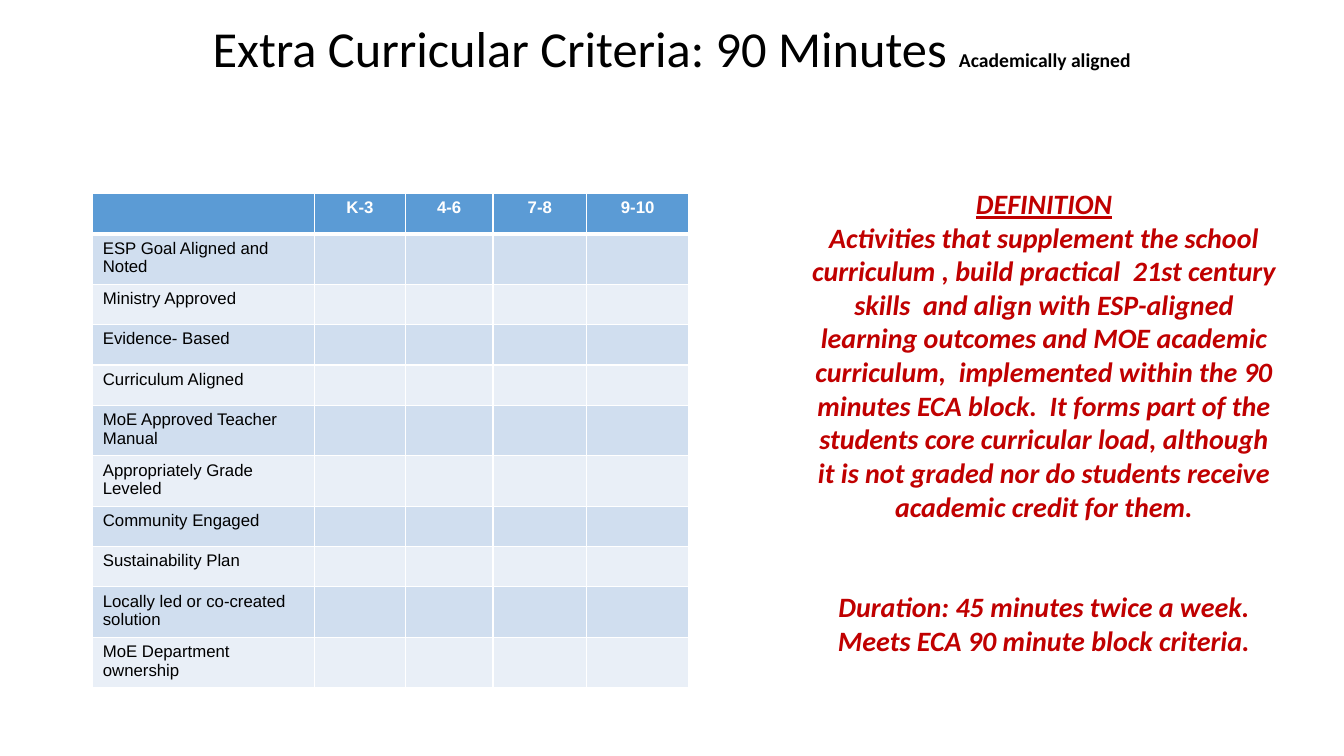
import lxml.etree
import pptx
import pptx.dml.color
import pptx.enum.text
import pptx.oxml.ns
import pptx.util

Inches = pptx.util.Inches
Pt = pptx.util.Pt
RGBColor = pptx.dml.color.RGBColor
CENTER = pptx.enum.text.PP_ALIGN.CENTER

BLACK = RGBColor(0x00, 0x00, 0x00)
WHITE = RGBColor(0xFF, 0xFF, 0xFF)
RED = RGBColor(0xC0, 0x00, 0x00)
HEADER_BLUE = RGBColor(0x5B, 0x9B, 0xD5)
BAND_DARK = RGBColor(0xD0, 0xDE, 0xEF)
BAND_LIGHT = RGBColor(0xE9, 0xEF, 0xF7)

GRADES = ["K-3", "4-6", "7-8", "9-10"]
CRITERIA = [
    "ESP Goal Aligned and Noted",
    "Ministry Approved",
    "Evidence- Based",
    "Curriculum Aligned",
    "MoE Approved Teacher Manual",
    "Appropriately Grade Leveled",
    "Community Engaged",
    "Sustainability Plan",
    "Locally led or co-created solution",
    "MoE Department ownership",
]
COLUMN_WIDTHS = [2.2, 0.9, 0.87, 0.93, 1.01]
ROW_HEIGHT = 0.4

DEFINITION = (
    "Activities that supplement the school curriculum , build practical  21st century "
    "skills  and align with ESP-aligned learning outcomes and MOE academic curriculum,  "
    "implemented within the 90 minutes ECA block.  It forms part of the students core "
    "curricular load, although it is not graded nor do students receive academic credit "
    "for them."
)
DURATION = "Duration: 45 minutes twice a week. Meets ECA 90 minute block criteria."


def add_span(para, text, font, size, color, bold=False, italic=False, underline=False):
    span = para.add_run()
    span.text = text
    span.font.name = font
    span.font.size = Pt(size)
    span.font.color.rgb = color
    span.font.bold = bold
    span.font.italic = italic
    span.font.underline = underline


def add_text_frame(page, left, top, width, height):
    box = page.shapes.add_textbox(Inches(left), Inches(top), Inches(width), Inches(height))
    frame = box.text_frame
    frame.word_wrap = True
    frame.margin_left = frame.margin_right = Inches(0.1)
    frame.margin_top = frame.margin_bottom = Inches(0.1)
    return frame


def add_title(page, left, top, width, height):
    para = add_text_frame(page, left, top, width, height).paragraphs[0]
    add_span(para, "Extra Curricular Criteria: 90 Minutes ", "Calibri", 36, BLACK)
    add_span(para, "Academically aligned", "Calibri", 14, BLACK, bold=True)


def add_definition(page, left, top, width, height):
    frame = add_text_frame(page, left, top, width, height)
    heading, body, duration = frame.paragraphs[0], frame.add_paragraph(), frame.add_paragraph()
    for para, text in ((heading, "DEFINITION"), (body, DEFINITION), (duration, DURATION)):
        para.alignment = CENTER
        add_span(para, text, "Calibri", 20, RED, bold=True, italic=True,
                 underline=para is heading)
    duration.space_before = Pt(48)


def set_borders(cell, bottom_width):
    properties = cell._tc.get_or_add_tcPr()
    qn = pptx.oxml.ns.qn
    for side, width in (("L", 1), ("R", 1), ("T", 1), ("B", bottom_width)):
        line = lxml.etree.SubElement(properties, qn("a:ln" + side), w=str(Pt(width)))
        fill = lxml.etree.SubElement(line, qn("a:solidFill"))
        lxml.etree.SubElement(fill, qn("a:srgbClr"), val=str(WHITE))


def add_criteria_table(page, left, top):
    rows = [[""] + GRADES] + [[name] + [""] * len(GRADES) for name in CRITERIA]
    table = page.shapes.add_table(
        len(rows), len(COLUMN_WIDTHS), Inches(left), Inches(top),
        Inches(sum(COLUMN_WIDTHS)), Inches(ROW_HEIGHT * len(rows))).table
    for column, width in zip(table.columns, COLUMN_WIDTHS):
        column.width = Inches(width)

    for r, texts in enumerate(rows):
        table.rows[r].height = Inches(ROW_HEIGHT)
        is_header = r == 0
        band = HEADER_BLUE if is_header else BAND_DARK if r % 2 else BAND_LIGHT
        for c, text in enumerate(texts):
            cell = table.cell(r, c)
            set_borders(cell, 3 if is_header else 1)
            cell.fill.solid()
            cell.fill.fore_color.rgb = band
            # Empty cells get no vertical margin, so they never stretch a row
            cell.margin_top = cell.margin_bottom = Inches(0.05 if text else 0)
            if text:
                para = cell.text_frame.paragraphs[0]
                if is_header:
                    para.alignment = CENTER
                add_span(para, text, "Arial", 12, WHITE if is_header else BLACK, bold=is_header)


def main():
    deck = pptx.Presentation()
    deck.slide_width = Inches(13.33)
    deck.slide_height = Inches(7.5)
    page = deck.slides.add_slide(deck.slide_layouts[6])

    add_definition(page, 7.93, 1.75, 4.85, 4.75)
    add_title(page, 2.01, 0.07, 9.66, 0.63)
    add_criteria_table(page, 0.92, 1.92)

    deck.save("out.pptx")


if __name__ == "__main__":
    main()
